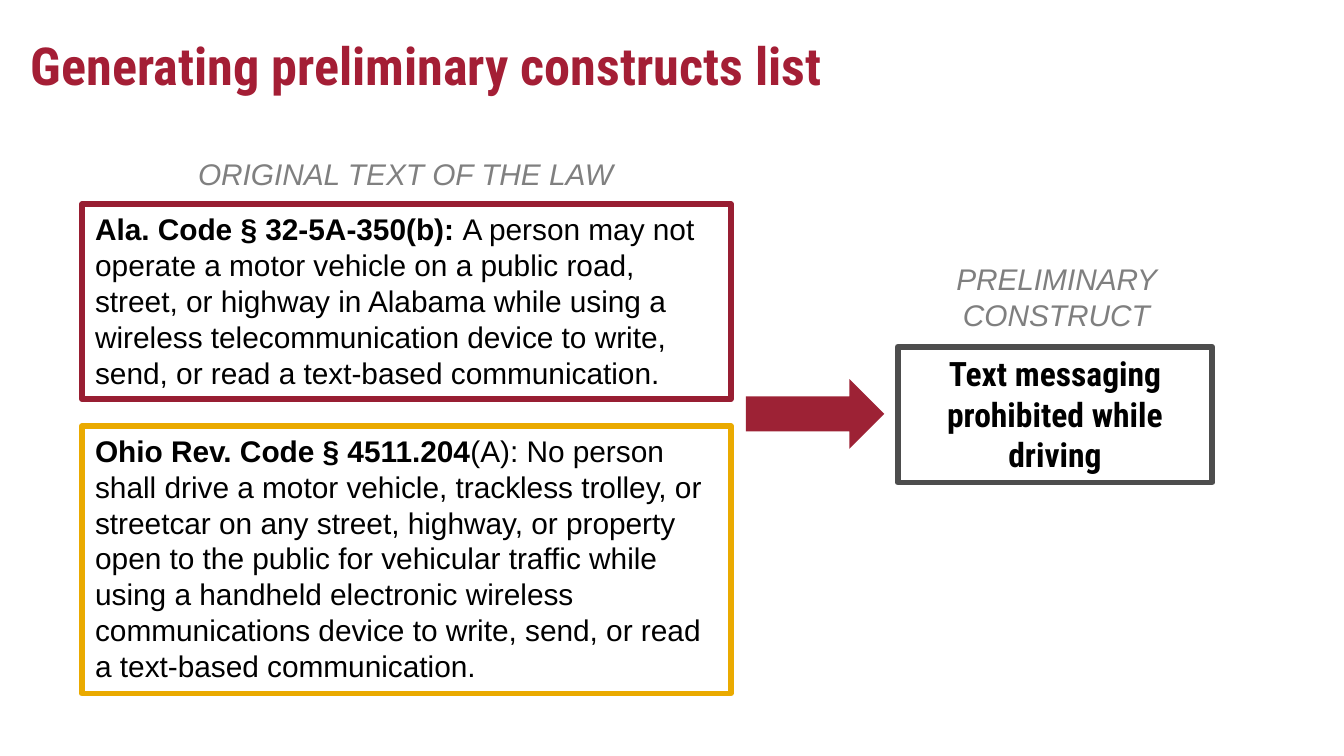
from pptx import Presentation
from pptx.dml.color import RGBColor
from pptx.enum.shapes import MSO_SHAPE
from pptx.enum.text import MSO_ANCHOR, PP_ALIGN
from pptx.util import Inches, Pt

RECTANGLE, RIGHT_ARROW = MSO_SHAPE.RECTANGLE, MSO_SHAPE.RIGHT_ARROW
LEFT, CENTER = PP_ALIGN.LEFT, PP_ALIGN.CENTER
TOP = MSO_ANCHOR.TOP
HEADING_FONT, BODY_FONT = "Roboto Condensed", "Arial"


def color(hex_code):
    return RGBColor.from_string(hex_code)


class SlideBuilder:
    def __init__(self, presentation):
        self.slide = presentation.slides.add_slide(presentation.slide_layouts[5])

    def style(self, font, name, size, hex_code, bold=False, italic=False):
        font.name, font.size = name, Pt(size)
        font.bold, font.italic = bold, italic
        font.color.rgb = color(hex_code)

    def title(self, text, left, top, width, height):
        title = self.slide.shapes.title
        title.left, title.top = Inches(left), Inches(top)
        title.width, title.height = Inches(width), Inches(height)
        frame = title.text_frame
        frame.text = text
        frame.word_wrap = True
        frame.vertical_anchor = TOP
        frame.margin_left = frame.margin_right = Inches(0.1)
        frame.margin_top = frame.margin_bottom = Inches(0.1)
        paragraph = frame.paragraphs[0]
        paragraph.alignment = LEFT
        self.style(paragraph.font, HEADING_FONT, 28, "A41E35", bold=True)

    def shape(self, preset, left, top, width, height):
        shape = self.slide.shapes.add_shape(
            preset, Inches(left), Inches(top), Inches(width), Inches(height))
        shape.shadow.inherit = False
        return shape

    def arrow(self, left, top, width, height, fill):
        arrow = self.shape(RIGHT_ARROW, left, top, width, height)
        arrow.fill.solid()
        arrow.fill.fore_color.rgb = color(fill)
        arrow.line.fill.background()

    def framed_box(self, left, top, width, height, border):
        """Outlined box without fill; returns its first paragraph."""
        box = self.shape(RECTANGLE, left, top, width, height)
        box.fill.background()
        box.line.color.rgb = color(border)
        box.line.width = Pt(3)
        box.text_frame.word_wrap = True
        box.text_frame.vertical_anchor = TOP
        return box.text_frame.paragraphs[0]

    def law(self, citation, wording, top, height, border):
        paragraph = self.framed_box(0.61, top, 4.83, height, border)
        paragraph.alignment = LEFT
        for text, bold in ((citation, True), (wording, False)):
            run = paragraph.add_run()
            run.text = text
            self.style(run.font, BODY_FONT, 16, "000000", bold=bold)

    def construct(self, text, left, top, width, height):
        paragraph = self.framed_box(left, top, width, height, "4D4D4D")
        paragraph.text = text
        paragraph.alignment = CENTER
        self.style(paragraph.font, HEADING_FONT, 18, "000000", bold=True)

    def caption(self, text, left, top, width, height, hex_code):
        caption = self.slide.shapes.add_textbox(
            Inches(left), Inches(top), Inches(width), Inches(height))
        caption.text_frame.word_wrap = True
        paragraph = caption.text_frame.paragraphs[0]
        paragraph.text = text
        paragraph.alignment = CENTER
        self.style(paragraph.font, BODY_FONT, 16, hex_code, italic=True)


def main():
    # Widescreen, 16:9
    presentation = Presentation()
    presentation.slide_width = Inches(10)
    presentation.slide_height = Inches(10 * 9 / 16)
    builder = SlideBuilder(presentation)

    builder.title("Generating preliminary constructs list", 0.13, 0.15, 9.16, 0.63)

    # Arrow from the laws to the construct
    builder.arrow(5.55, 2.82, 1.03, 0.52, "9D2235")

    # Laws
    builder.law(
        "Ala. Code § 32-5A-350(b): ",
        "A person may not operate a motor vehicle on a public road, street, or "
        "highway in Alabama while using a wireless telecommunication device to "
        "write, send, or read a text-based communication.",
        1.52, 1.45, "981E32")
    builder.law(
        "Ohio Rev. Code § 4511.204",
        "(A): No person shall drive a motor vehicle, trackless trolley, or "
        "streetcar on any street, highway, or property open to the public for "
        "vehicular traffic while using a handheld electronic wireless "
        "communications device to write, send, or read a text-based communication.",
        3.17, 1.99, "EAAA00")

    # Resulting construct
    builder.construct("Text messaging prohibited while driving", 6.68, 2.58, 2.34, 1.01)

    # Captions
    builder.caption("ORIGINAL TEXT OF THE LAW", 0.98, 1.11, 4.08, 0.37, "808080")
    builder.caption("PRELIMINARY CONSTRUCT", 6.52, 1.89, 2.68, 0.64, "7F7F7F")

    presentation.save("out.pptx")


if __name__ == "__main__":
    main()
